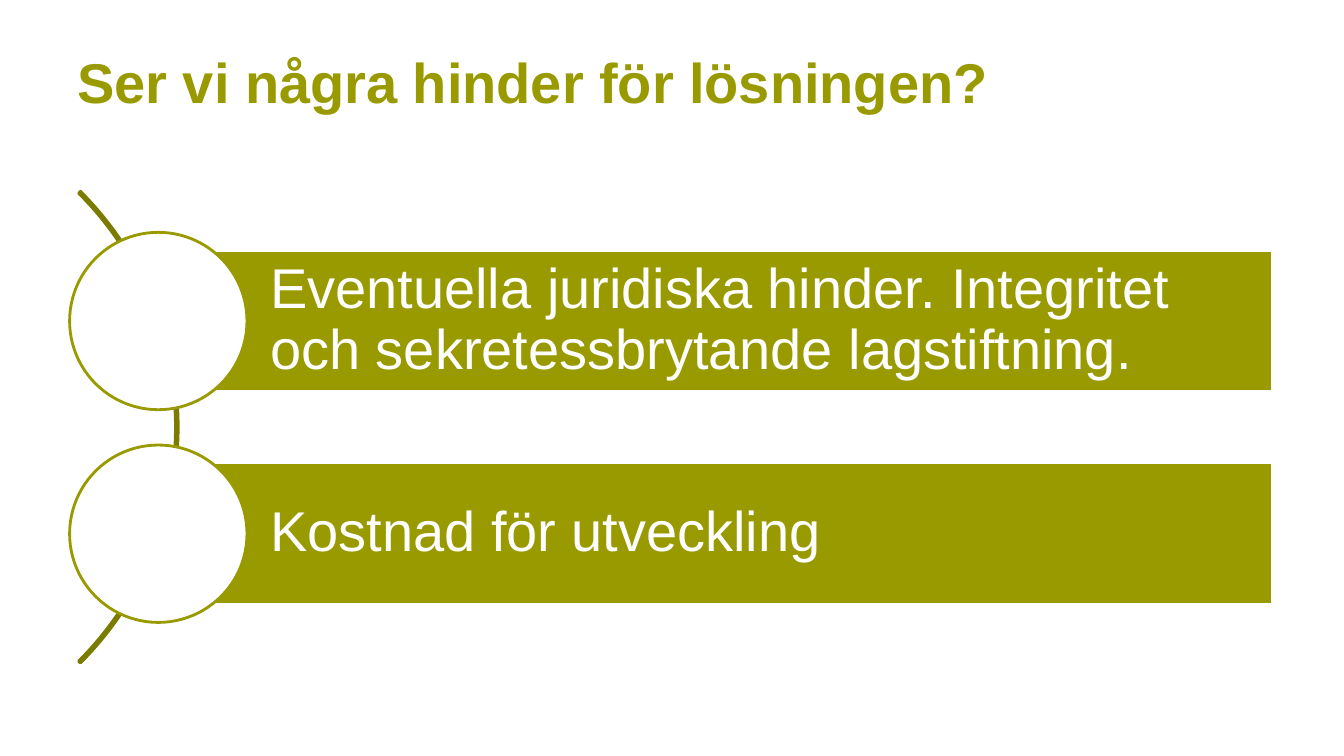
from pptx import Presentation
from pptx.dml.color import RGBColor
from pptx.enum.shapes import MSO_SHAPE
from pptx.enum.text import MSO_ANCHOR, PP_ALIGN
from pptx.util import Cm, Pt

OLIVE, DARK_OLIVE, WHITE = "999900", "7B7B00", "FFFFFF"


def add_outlined(preset, left, top, width, height, fill, line):
    """Add a shape without shadow; a fill of None leaves it hollow."""
    shape = slide.shapes.add_shape(preset, Cm(left), Cm(top), Cm(width), Cm(height))
    shape.shadow.inherit = False
    if fill:
        shape.fill.solid()
        shape.fill.fore_color.rgb = RGBColor.from_string(fill)
    else:
        shape.fill.background()
    shape.line.color.rgb = RGBColor.from_string(line)
    shape.line.width = Pt(2)
    return shape


def write_text(frame, text, color, bold=False):
    frame.word_wrap = True
    frame.vertical_anchor = MSO_ANCHOR.MIDDLE
    frame.text = text
    paragraph = frame.paragraphs[0]
    paragraph.alignment = PP_ALIGN.LEFT
    font = paragraph.runs[0].font
    font.name = "Arial"
    font.size = Pt(40)
    font.bold = bold
    font.color.rgb = RGBColor.from_string(color)


presentation = Presentation()
presentation.slide_width = Cm(33.87)
presentation.slide_height = Cm(19.05)
slide = presentation.slides.add_slide(presentation.slide_layouts[6])

arc = add_outlined(MSO_SHAPE.BLOCK_ARC, -12.32, 2.36, 16.81, 16.81, None, DARK_OLIVE)
# Start angle, end angle (both in units of 100000/60000 degrees) and thickness
for index, value in enumerate((189, 27, 0.004)):
    arc.adjustments[index] = value

obstacles = [
    "Eventuella juridiska hinder. Integritet och sekretessbrytande lagstiftning.",
    "Kostnad för utveckling",
]
bar_left, bar_height, circle_size = 3.99, 3.56, 4.47
for index, obstacle in enumerate(obstacles):
    center = 8.09 + index * 5.36
    bar = add_outlined(MSO_SHAPE.RECTANGLE, bar_left, center - bar_height / 2,
                       28.09, bar_height, OLIVE, WHITE)
    frame = bar.text_frame
    frame.margin_left = Cm(2.82)
    frame.margin_top = frame.margin_right = frame.margin_bottom = Cm(0.28)
    write_text(frame, obstacle, WHITE)
    frame.paragraphs[0].line_spacing = 0.9
    add_outlined(MSO_SHAPE.OVAL, bar_left - circle_size / 2, center - circle_size / 2,
                 circle_size, circle_size, WHITE, OLIVE)

title = slide.shapes.add_textbox(Cm(1.7), Cm(0.76), Cm(30.43), Cm(2.59))
write_text(title.text_frame, "Ser vi några hinder för lösningen?", OLIVE, bold=True)

presentation.save("out.pptx")
